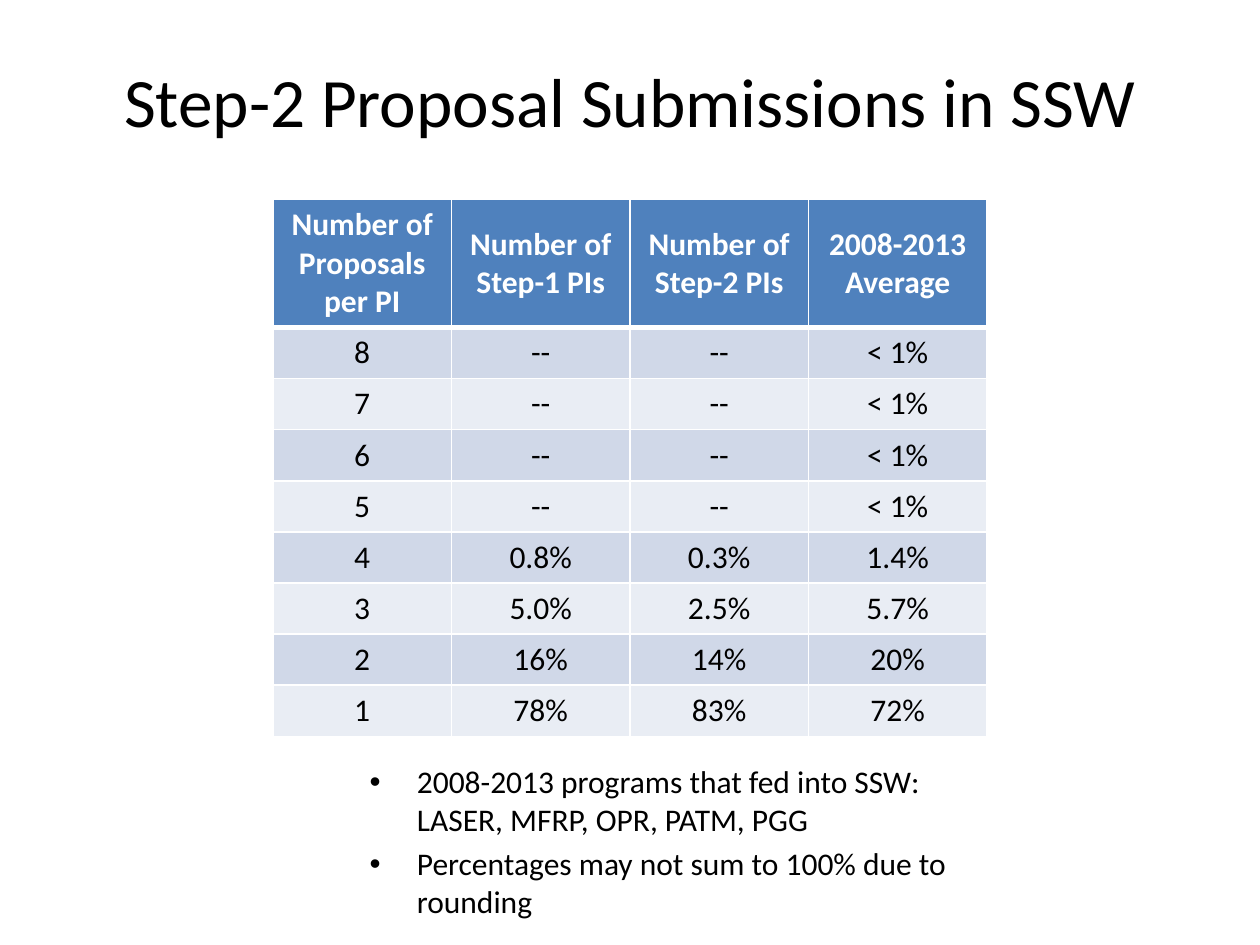
from lxml import etree
from pptx import Presentation
from pptx.dml.color import RGBColor
from pptx.enum import text
from pptx.oxml import ns
from pptx.util import Pt

COLORS = {
    "ink": "000000",
    "white": "FFFFFF",
    "header": "4F81BD",
    "dark_band": "D0D8E8",
    "light_band": "E9EDF4",
}
FONT = "Calibri"

TITLE = "Step-2 Proposal Submissions in SSW"
HEADINGS = ("Number of Proposals per PI", "Number of Step-1 PIs",
            "Number of Step-2 PIs", "2008-2013 Average")
SHARES = [
    ("8", "--", "--", "< 1%"),
    ("7", "--", "--", "< 1%"),
    ("6", "--", "--", "< 1%"),
    ("5", "--", "--", "< 1%"),
    ("4", "0.8%", "0.3%", "1.4%"),
    ("3", "5.0%", "2.5%", "5.7%"),
    ("2", "16%", "14%", "20%"),
    ("1", "78%", "83%", "72%"),
]
NOTES = ("2008-2013 programs that fed into SSW: LASER, MFRP, OPR, PATM, PGG",
         "Percentages may not sum to 100% due to rounding")


def write(paragraph, words, size=18, color="ink", bold=False, align=None):
    """Put formatted words into a paragraph."""
    run = paragraph.add_run()
    run.text = words
    run.font.name = FONT
    run.font.size = Pt(size)
    run.font.bold = bold
    run.font.color.rgb = RGBColor.from_string(COLORS[color])
    if align is not None:
        paragraph.alignment = align


def draw_borders(cell, bottom=1):
    """Give a cell white edges; they must precede its fill in the XML."""
    properties = cell._tc.get_or_add_tcPr()
    widths = {"a:lnL": 1, "a:lnR": 1, "a:lnT": 1, "a:lnB": bottom}
    for position, (edge, width) in enumerate(widths.items()):
        line = etree.Element(ns.qn(edge), w=str(Pt(width)))
        fill = etree.SubElement(line, ns.qn("a:solidFill"))
        etree.SubElement(fill, ns.qn("a:srgbClr"), val=COLORS["white"])
        properties.insert(position, line)


class SlideBuilder:
    def __init__(self, slide):
        self.slide = slide

    def place(self, holder, left, top, width, height):
        holder.left, holder.top = Pt(left), Pt(top)
        holder.width, holder.height = Pt(width), Pt(height)
        holder.text_frame.auto_size = text.MSO_AUTO_SIZE.NONE
        return holder.text_frame

    def title(self, words, *box):
        frame = self.place(self.slide.shapes.title, *box)
        frame.vertical_anchor = text.MSO_ANCHOR.MIDDLE
        write(frame.paragraphs[0], words, size=39.6, align=text.PP_ALIGN.CENTER)

    def bullets(self, items, *box):
        frame = self.place(self.slide.placeholders[1], *box)
        for index, item in enumerate(items):
            write(frame.add_paragraph() if index else frame.paragraphs[0], item)

    def table(self, rows, left, top, column_width, header_height, row_height):
        columns = len(rows[0])
        height = header_height + row_height * (len(rows) - 1)
        grid = self.slide.shapes.add_table(
            len(rows), columns, Pt(left), Pt(top),
            Pt(column_width * columns), Pt(height)).table
        for column in grid.columns:
            column.width = Pt(column_width)
        for r, row in enumerate(rows):
            is_header = r == 0
            grid.rows[r].height = Pt(header_height if is_header else row_height)
            band = "header" if is_header else ("light_band", "dark_band")[r % 2]
            for c, words in enumerate(row):
                cell = grid.cell(r, c)
                cell.vertical_anchor = text.MSO_ANCHOR.MIDDLE
                cell.fill.solid()
                cell.fill.fore_color.rgb = RGBColor.from_string(COLORS[band])
                draw_borders(cell, bottom=3 if is_header else 1)
                write(cell.text_frame.paragraphs[0], words, bold=is_header,
                      color="white" if is_header else "ink",
                      align=text.PP_ALIGN.CENTER)


def main():
    deck = Presentation()
    deck.slide_width, deck.slide_height = Pt(720), Pt(540)
    builder = SlideBuilder(deck.slides.add_slide(deck.slide_layouts[1]))

    # Heading
    builder.title(TITLE, 36, 12, 648, 90)
    # Proposals per PI
    builder.table([HEADINGS, *SHARES], left=156, top=114, column_width=102,
                  header_height=73, row_height=29.2)
    # Remarks under the table
    builder.bullets(NOTES, 204, 432, 354, 102)

    deck.save("out.pptx")


if __name__ == "__main__":
    main()
